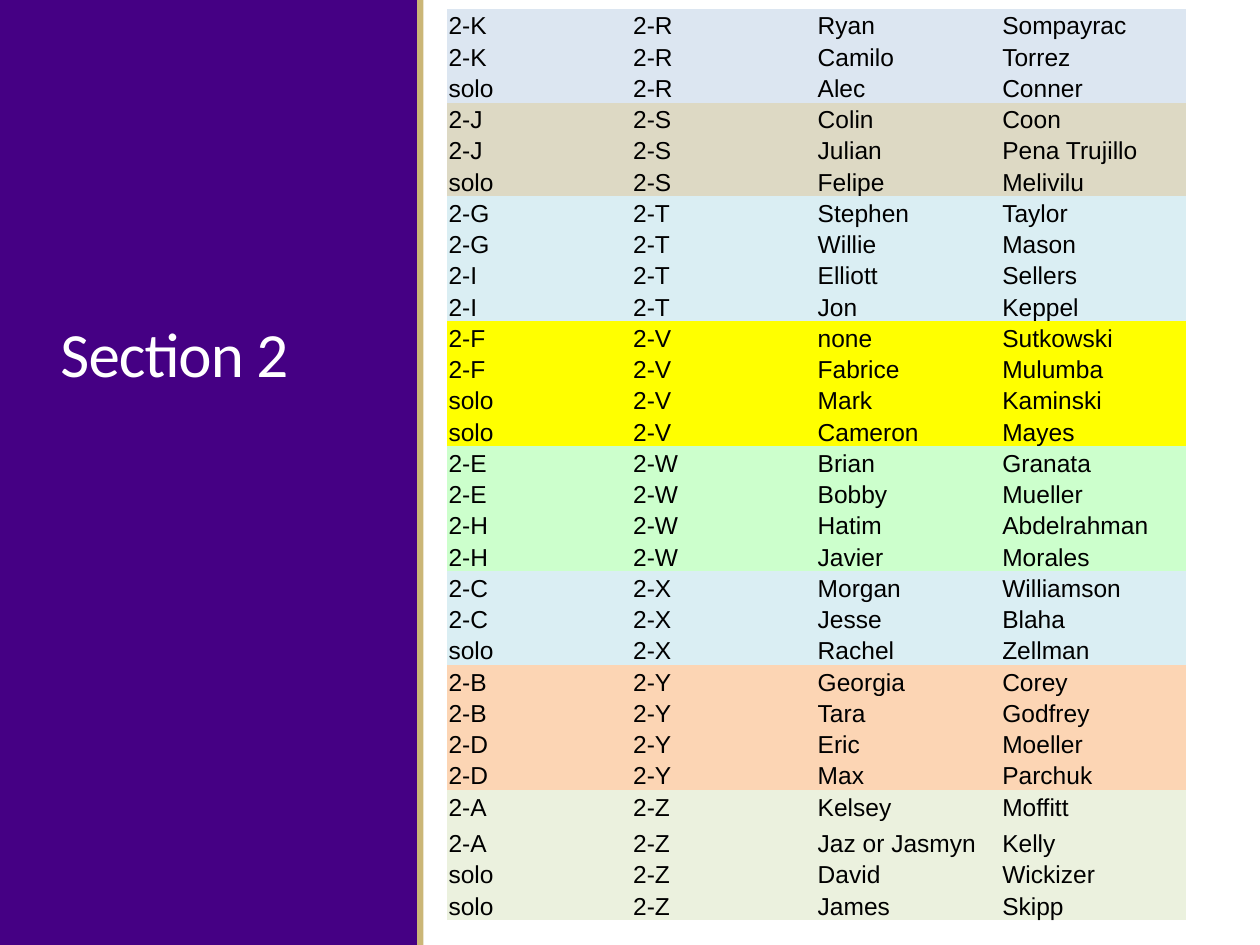
from dataclasses import dataclass

from pptx import Presentation
from pptx import util as u
from pptx.dml.color import RGBColor
from pptx.enum import shapes, text


@dataclass(frozen=True)
class Theme:
    panel: str = "450084"
    stripe: str = "CBB677"
    title_ink: str = "FFFFFF"
    table_ink: str = "000000"
    title_font: str = "Calibri"
    table_font: str = "Arial"
    title_size: int = 36
    table_size: int = 14


@dataclass(frozen=True)
class Team:
    name: str
    color: str
    members: tuple[tuple[str, str, str], ...]  # pair, first name, last name


@dataclass(frozen=True)
class Area:
    """A rectangle given as shares of the slide's size."""
    left: float
    top: float
    width: float
    height: float

    def lengths(self) -> tuple[int, int, int, int]:
        return (int(WIDTH * self.left), int(HEIGHT * self.top),
                int(WIDTH * self.width), int(HEIGHT * self.height))


THEME = Theme()
WIDTH, HEIGHT = u.Inches(10), u.Inches(7.5)
PANEL = Area(0, 0, 3.32 / 10, 1)
STRIPE = Area(3.31 / 10, 0, 0.05 / 10, 1)
TITLE = Area(0.38 / 10, 0.65 / 7.5, 2.62 / 10, 2.5 / 7.5)
ROSTER = Area(3.55 / 10, 0.07 / 7.5, 5.86 / 10, 7.24 / 7.5)
COLUMNS = 4
TALL_ROW, TALL_HEIGHT = 26, u.Inches(0.29)
PLAIN_TABLE = "{2D5ABB26-0587-4C30-8999-92F81FD0307C}"

TEAMS = (
    Team("2-R", "DCE6F1", (("2-K", "Ryan", "Sompayrac"), ("2-K", "Camilo", "Torrez"),
                           ("solo", "Alec", "Conner"))),
    Team("2-S", "DDD9C4", (("2-J", "Colin", "Coon"), ("2-J", "Julian", "Pena Trujillo"),
                           ("solo", "Felipe", "Melivilu"))),
    Team("2-T", "DAEEF3", (("2-G", "Stephen", "Taylor"), ("2-G", "Willie", "Mason"),
                           ("2-I", "Elliott", "Sellers"), ("2-I", "Jon", "Keppel"))),
    Team("2-V", "FFFF00", (("2-F", "none", "Sutkowski"), ("2-F", "Fabrice", "Mulumba"),
                           ("solo", "Mark", "Kaminski"), ("solo", "Cameron", "Mayes"))),
    Team("2-W", "CCFFCC", (("2-E", "Brian", "Granata"), ("2-E", "Bobby", "Mueller"),
                           ("2-H", "Hatim", "Abdelrahman"), ("2-H", "Javier", "Morales"))),
    Team("2-X", "DAEEF3", (("2-C", "Morgan", "Williamson"), ("2-C", "Jesse", "Blaha"),
                           ("solo", "Rachel", "Zellman"))),
    Team("2-Y", "FCD5B4", (("2-B", "Georgia", "Corey"), ("2-B", "Tara", "Godfrey"),
                           ("2-D", "Eric", "Moeller"), ("2-D", "Max", "Parchuk"))),
    Team("2-Z", "EBF1DE", (("2-A", "Kelsey", "Moffitt"), ("2-A", "Jaz or Jasmyn", "Kelly"),
                           ("solo", "David", "Wickizer"), ("solo", "James", "Skipp"))),
)


def add_span(para, words: str, font: str, size: int, color: str):
    span = para.add_run()
    span.text = words
    span.font.name = font
    span.font.size = u.Pt(size)
    span.font.color.rgb = RGBColor.from_string(color)
    return span


def add_band(page, area: Area, color: str) -> None:
    band = page.shapes.add_shape(shapes.MSO_SHAPE.RECTANGLE, *area.lengths())
    band.shadow.inherit = False
    band.fill.solid()
    band.fill.fore_color.rgb = RGBColor.from_string(color)
    band.line.fill.background()


def format_title(page, words: str) -> None:
    title = page.shapes.title
    title.left, title.top, title.width, title.height = TITLE.lengths()
    frame = title.text_frame
    frame.word_wrap = True
    frame.auto_size = text.MSO_AUTO_SIZE.NONE
    frame.vertical_anchor = text.MSO_ANCHOR.BOTTOM
    para = frame.paragraphs[0]
    para.alignment = text.PP_ALIGN.LEFT
    para.line_spacing = 0.85
    span = add_span(para, words, THEME.title_font, THEME.title_size, THEME.title_ink)
    span.font._element.set("spc", "-50")
    # Bring the title in front of the side panel
    page.shapes._spTree.append(title._element)


def fill_cell(cell, words: str, color: str) -> None:
    cell.fill.solid()
    cell.fill.fore_color.rgb = RGBColor.from_string(color)
    cell.vertical_anchor = text.MSO_ANCHOR.BOTTOM
    cell.margin_left = cell.margin_right = cell.margin_top = u.Inches(0.01)
    cell.margin_bottom = 0
    add_span(cell.text_frame.paragraphs[0], words,
             THEME.table_font, THEME.table_size, THEME.table_ink)


def add_roster(page, teams: tuple[Team, ...]) -> None:
    rows = [(team.color, (pair, team.name, first, last))
            for team in teams for pair, first, last in team.members]
    frame = page.shapes.add_table(len(rows), COLUMNS, *ROSTER.lengths())
    table = frame.table
    table.first_row = table.horz_banding = False
    table._tbl.tblPr.find("{*}tableStyleId").text = PLAIN_TABLE

    # Equal rows share what the one taller row leaves
    row_height = (ROSTER.lengths()[3] - TALL_HEIGHT) // (len(rows) - 1)
    for index, (color, entries) in enumerate(rows):
        table.rows[index].height = TALL_HEIGHT if index == TALL_ROW else row_height
        for column, words in enumerate(entries):
            fill_cell(table.cell(index, column), words, color)


def main() -> None:
    deck = Presentation()
    deck.slide_width, deck.slide_height = WIDTH, HEIGHT
    page = deck.slides.add_slide(deck.slide_layouts.get_by_name("Title Only"))

    # Side panel with its edge stripe and title
    add_band(page, PANEL, THEME.panel)
    add_band(page, STRIPE, THEME.stripe)
    format_title(page, "Section 2")

    # Team roster
    add_roster(page, TEAMS)
    deck.save("out.pptx")


if __name__ == "__main__":
    main()
